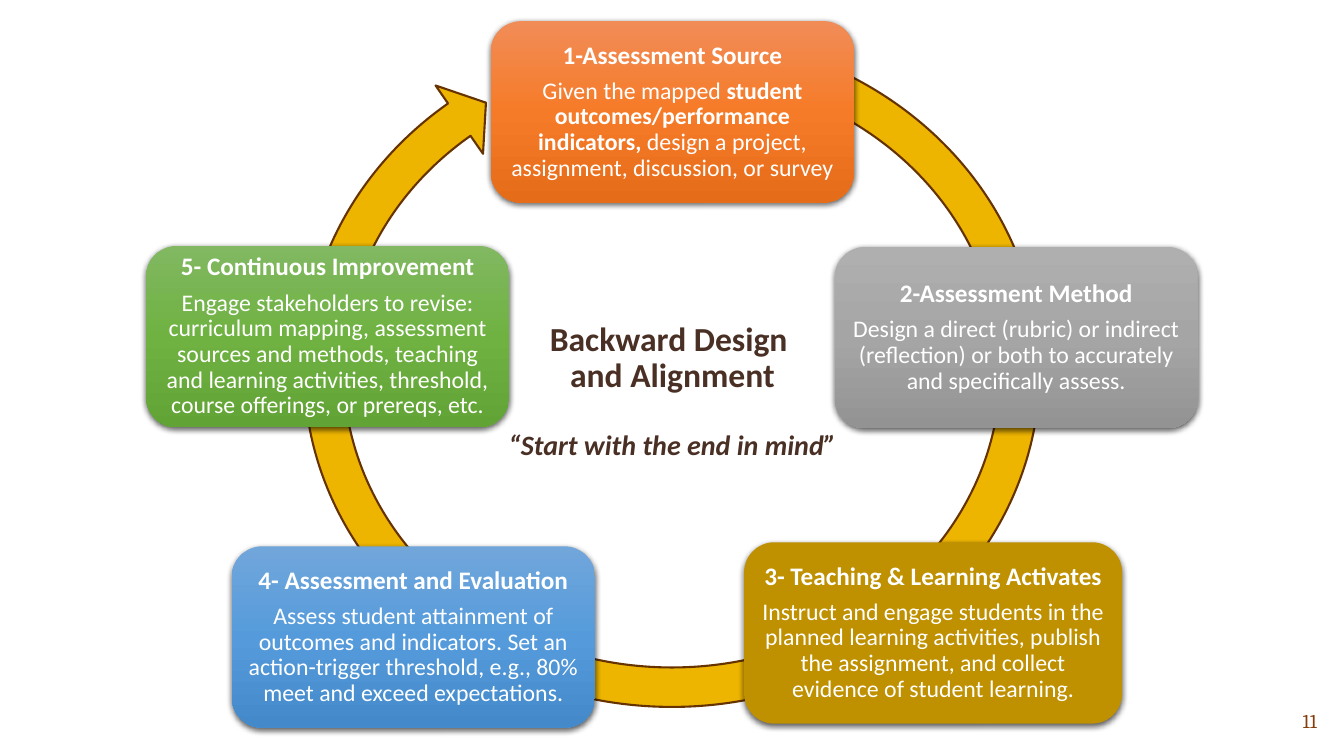
from copy import deepcopy

from lxml.etree import SubElement
from pptx import Presentation
from pptx.dml.color import RGBColor
from pptx.enum.shapes import MSO_SHAPE as Preset
from pptx.enum.text import MSO_ANCHOR as Anchor, MSO_AUTO_SIZE as AutoSize, PP_ALIGN as Align
from pptx.oxml.ns import qn
from pptx.util import Inches, Pt

COLORS = {
    "ring": "EEB500", "ring_edge": "663300", "step_text": "FFFFFF",
    "title": "492F24", "page": "843C0B", "shadow": "000000",
    "orange": ("F18C57", "F67B28", "E56C19"),
    "gray": ("AFAFAF", "A5A5A5", "939393"),
    "gold": "BF9000",
    "blue": ("71A6DB", "559BDB", "448ACA"),
    "green": ("81B861", "6FB242", "62A336"),
}

STEPS = [
    (4.87, 0.21, 3.6, "orange", "1-Assessment Source",
     [("Given the mapped ", False),
      ("student outcomes/performance indicators, ", True),
      ("design a project, assignment, discussion, or survey", False)]),
    (8.28, 2.45, 3.6, "gray", "2-Assessment Method",
     [("Design a direct (rubric) or indirect (reflection) or both to accurately "
       "and specifically assess.", False)]),
    (7.38, 5.38, 3.75, "gold", "3- Teaching & Learning Activates",
     [("Instruct and engage students in the planned learning activities, publish "
       "the assignment, and collect evidence of student learning.", False)]),
    (2.3, 5.42, 3.6, "blue", "4- Assessment and Evaluation",
     [("Assess student attainment of outcomes and indicators. Set an "
       "action-trigger threshold, e.g., 80% meet and exceed expectations.", False)]),
    (1.45, 2.44, 3.6, "green", "5- Continuous Improvement",
     [("Engage stakeholders to revise: curriculum mapping, assessment sources and "
       "methods, teaching and learning activities, threshold, course offerings, "
       "or prereqs, etc.", False)]),
]


class CycleSlide:
    """Draws the parts of a cycle diagram on one slide in a shared style."""

    def __init__(self, slide, font="Calibri", step_height=1.8):
        self.slide = slide
        self.font = font
        self.step_height = step_height

    def rgb(self, name):
        return RGBColor.from_string(COLORS[name])

    def style(self, paragraph, size, color, bold=None, italic=None,
              align=Align.CENTER, font=None):
        paragraph.alignment = align
        paragraph.font.name = font or self.font
        paragraph.font.size = Pt(size)
        paragraph.font.bold = bold
        paragraph.font.italic = italic
        paragraph.font.color.rgb = self.rgb(color)

    def shape(self, preset, left, top, width, height):
        shape = self.slide.shapes.add_shape(
            preset, Inches(left), Inches(top), Inches(width), Inches(height))
        shape.shadow.inherit = False
        return shape

    def ring(self, left, top, width, height, adjustments):
        ring = self.shape(Preset.CIRCULAR_ARROW, left, top, width, height)
        for index, value in enumerate(adjustments):
            ring.adjustments[index] = value
        ring.fill.solid()
        ring.fill.fore_color.rgb = self.rgb("ring")
        ring.line.color.rgb = self.rgb("ring_edge")
        ring.line.width = Pt(1.5)

    def paint(self, shape, color):
        if isinstance(COLORS[color], str):
            shape.fill.solid()
            shape.fill.fore_color.rgb = self.rgb(color)
            return
        shape.fill.gradient()
        shape.fill.gradient_angle = 270
        stop_list = next(shape._element.spPr.iter(qn("a:gsLst")))
        stop_list.append(deepcopy(stop_list[-1]))
        for index, stop in enumerate(shape.fill.gradient_stops):
            stop.position = index / 2
            stop.color.rgb = RGBColor.from_string(COLORS[color][index])

    def drop_shadow(self, shape):
        effects = shape._element.spPr.find(qn("a:effectLst"))
        shadow = SubElement(effects, qn("a:outerShdw"), blurRad=str(Pt(4.5)),
                            dist=str(Pt(1.5)), dir="5400000", algn="ctr", rotWithShape="0")
        tint = SubElement(shadow, qn("a:srgbClr"), val=COLORS["shadow"])
        SubElement(tint, qn("a:alpha"), val="63000")

    def step(self, left, top, width, color, heading, details):
        card = self.shape(Preset.ROUNDED_RECTANGLE, left, top, width, self.step_height)
        self.paint(card, color)
        card.line.fill.background()
        self.drop_shadow(card)
        frame = card.text_frame
        frame.word_wrap = True
        frame.vertical_anchor = Anchor.MIDDLE
        frame.margin_left = frame.margin_right = Inches(0.07)
        frame.margin_top = frame.margin_bottom = Inches(0.07)
        name, body = frame.paragraphs[0], frame.add_paragraph()
        name.text = heading
        self.style(name, 18, "step_text", bold=True)
        self.style(body, 17, "step_text")
        for text, bold in details:
            run = body.add_run()
            run.text = text
            run.font.bold = bold
        for paragraph in (name, body):
            paragraph.line_spacing = 0.9
            paragraph.space_after = Pt(6.5)

    def title(self, left, top, width, height, lines, motto):
        title = self.slide.shapes.title
        title.left, title.top = Inches(left), Inches(top)
        title.width, title.height = Inches(width), Inches(height)
        frame = title.text_frame
        frame.word_wrap = True
        frame.auto_size = AutoSize.NONE
        frame.vertical_anchor = Anchor.MIDDLE
        frame.text = "\n".join([*lines, motto])
        for paragraph in frame.paragraphs:
            self.style(paragraph, 24, "title", bold=True)
            paragraph.line_spacing = 0.9
            paragraph.space_before = Pt(0)
        closing = frame.paragraphs[-1]
        self.style(closing, 20, "title", bold=True, italic=True)
        closing.space_before = Pt(26)

    def page_number(self, left, top, width, height, number):
        box = self.slide.shapes.add_textbox(
            Inches(left), Inches(top), Inches(width), Inches(height))
        frame = box.text_frame
        frame.word_wrap = True
        frame.vertical_anchor = Anchor.MIDDLE
        frame.text = number
        self.style(frame.paragraphs[0], 14, "page", align=Align.RIGHT, font="Cambria")


def main():
    deck = Presentation()
    deck.slide_width, deck.slide_height = Inches(13.33), Inches(7.5)
    cycle = CycleSlide(deck.slides.add_slide(deck.slide_layouts[5]))
    cycle.ring(2.8, 0.12, 7.73, 7.11, (0.055, 3.307, 137.826, 173.819, 0.058))
    for step in STEPS:
        cycle.step(*step)
    cycle.title(4.82, 2.81, 3.7, 2.15, ["Backward Design ", "and Alignment"],
                "“Start with the end in mind”")
    cycle.page_number(10.16, 6.95, 3, 0.4, "11")
    deck.save("out.pptx")


if __name__ == "__main__":
    main()
